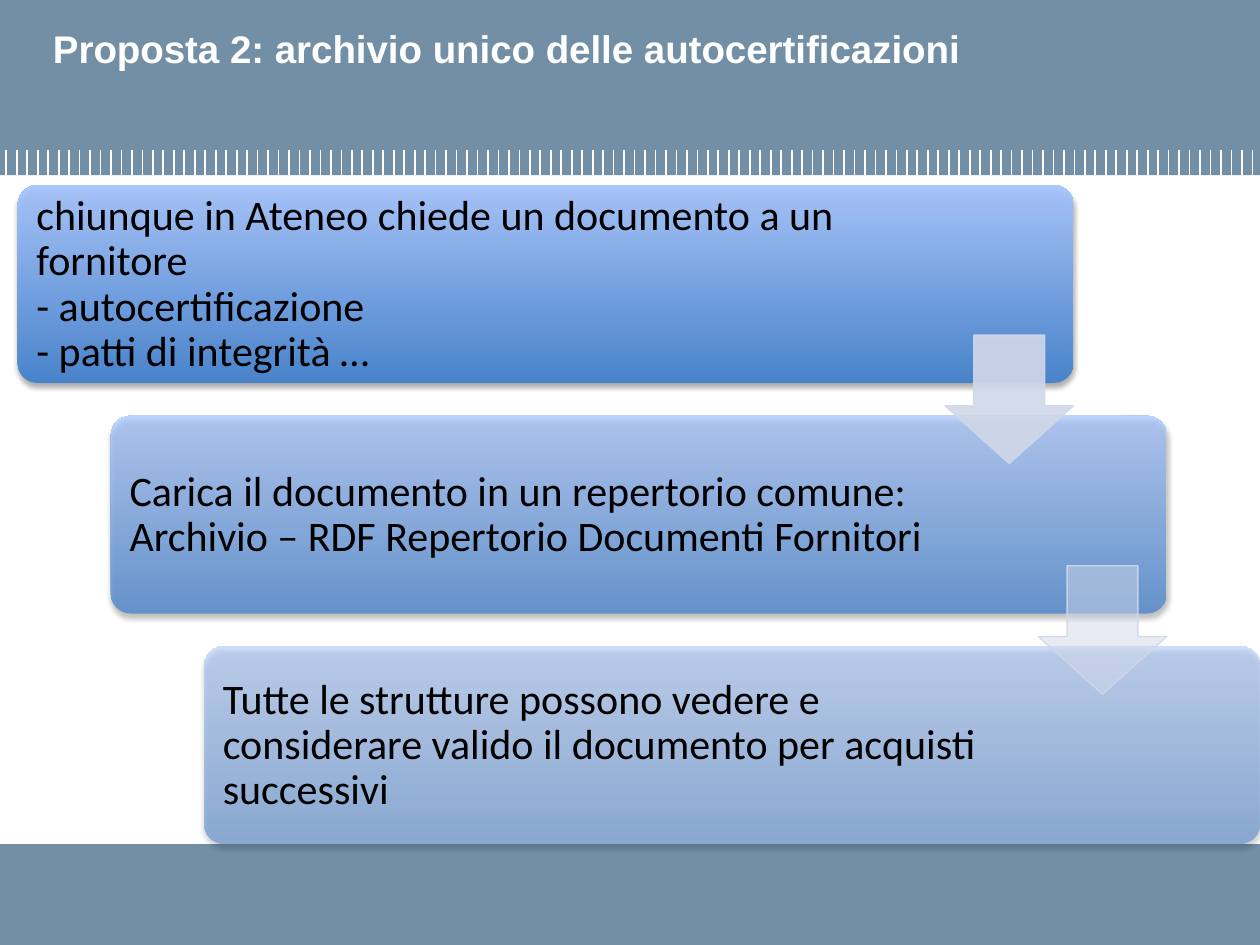
from pptx import Presentation
from pptx.dml.color import RGBColor
from pptx.enum.shapes import MSO_CONNECTOR, MSO_SHAPE
from pptx.enum.text import MSO_ANCHOR, PP_ALIGN
from pptx.oxml import parse_xml
from pptx.oxml.ns import nsdecls, qn
from pptx.util import Inches, Pt

BAND = "728FA5"
WHITE = "FFFFFF"
ARROW = "D0D8E8"
TICK_COUNT = 120
STEPS = [
    (["chiunque in Ateneo chiede un documento a un fornitore",
      "- autocertificazione", "- patti di integrità …"], 6.69, 90),
    (["Carica il documento in un repertorio comune:",
      "Archivio – RDF Repertorio Documenti Fornitori"], 6.53, 70),
    (["Tutte le strutture possono vedere e considerare valido il documento "
      "per acquisti successivi"], 6.53, 50),
]
ARROW_OPACITIES = [90, 50]


def color(value):
    return RGBColor.from_string(value)


def set_opacity(element, percent):
    for node in element.iter(qn("a:srgbClr")):
        node.append(parse_xml(f'<a:alpha {nsdecls("a")} val="{percent * 1000}"/>'))


def add_shape(page, kind, left, top, width, height):
    shape = page.shapes.add_shape(
        kind, Inches(left), Inches(top), Inches(width), Inches(height))
    shape.shadow.inherit = False
    shape.line.fill.background()
    return shape


def add_band(page, left, top, width, height):
    band = add_shape(page, MSO_SHAPE.RECTANGLE, left, top, width, height)
    band.fill.solid()
    band.fill.fore_color.rgb = color(BAND)


def add_ticks(page, left, top, width, height):
    for index in range(TICK_COUNT):
        x = Inches(left + index * width / (TICK_COUNT - 1))
        tick = page.shapes.add_connector(
            MSO_CONNECTOR.STRAIGHT, x, Inches(top), x, Inches(top + height))
        tick.line.color.rgb = color(WHITE)
        tick.line.width = Pt(1)
        tick._element.spPr.append(parse_xml(f'<a:effectLst {nsdecls("a")}/>'))


def add_title(page, left, top, width, height):
    title = page.shapes.title
    title.left, title.top = Inches(left), Inches(top)
    title.width, title.height = Inches(width), Inches(height)
    page.shapes._spTree.append(title._element)
    title.text_frame.vertical_anchor = MSO_ANCHOR.TOP
    para = title.text_frame.paragraphs[0]
    para.alignment = PP_ALIGN.LEFT
    span = para.add_run()
    span.text = "Proposta 2: archivio unico delle autocertificazioni"
    span.font.name = "Arial"
    span.font.size = Pt(22)
    span.font.bold = True
    span.font.color.rgb = color(WHITE)


def add_panel(page, left, top, width, height, opacity):
    panel = add_shape(page, MSO_SHAPE.ROUNDED_RECTANGLE, left, top, width, height)
    panel.adjustments[0] = 0.1
    panel.fill.gradient()
    panel.fill.gradient_angle = 90
    for stop, value in zip(panel.fill.gradient_stops, ["3F7FCE", "A4C4FF"]):
        stop.color.rgb = color(value)
    properties = panel._element.spPr
    set_opacity(properties, opacity)
    properties.find(qn("a:effectLst")).append(parse_xml(
        f'<a:outerShdw {nsdecls("a")} blurRad="{Pt(3.1)}" dist="{Pt(1.8)}" '
        'dir="5400000" rotWithShape="0"><a:srgbClr val="000000">'
        '<a:alpha val="35000"/></a:srgbClr></a:outerShdw>'))


def add_step_text(page, left, top, width, height, lines):
    box = page.shapes.add_textbox(
        Inches(left), Inches(top), Inches(width), Inches(height))
    frame = box.text_frame
    frame.word_wrap = True
    frame.vertical_anchor = MSO_ANCHOR.MIDDLE
    frame.margin_left = frame.margin_right = Inches(0.1)
    frame.margin_top = frame.margin_bottom = Inches(0.1)
    para = frame.paragraphs[0]
    para.line_spacing = 0.9
    for index, line in enumerate(lines):
        if index:
            para.add_line_break()
        span = para.add_run()
        span.text = line
        span.font.name = "Calibri"
        span.font.size = Pt(24)
        span.font.color.rgb = color("000000")


def add_arrow(page, left, top, size, opacity):
    arrow = add_shape(page, MSO_SHAPE.DOWN_ARROW, left, top, size, size)
    arrow.adjustments[0] = 0.55
    arrow.adjustments[1] = 0.45
    arrow.fill.solid()
    arrow.fill.fore_color.rgb = color(ARROW)
    set_opacity(arrow._element.spPr, opacity)
    arrow.line.color.rgb = color(ARROW)
    arrow.line.width = Pt(0.75)
    set_opacity(arrow._element.spPr.find(qn("a:ln")), 90)


def add_process(page, left, top, width, height):
    panel_width, panel_height, arrow_size = 8.38, 1.57, 1.02
    step_x = (width - panel_width) / (len(STEPS) - 1)
    step_y = (height - panel_height) / (len(STEPS) - 1)
    for index, (lines, text_width, opacity) in enumerate(STEPS):
        x, y = left + index * step_x, top + index * step_y
        add_panel(page, x, y, panel_width, panel_height, opacity)
        add_step_text(page, x + 0.05, y + 0.05, text_width, panel_height - 0.09, lines)
    for index, opacity in enumerate(ARROW_OPACITIES):
        x = left + index * step_x + panel_width - arrow_size
        add_arrow(page, x, top + index * step_y + 1.19, arrow_size, opacity)


def main():
    deck = Presentation()
    deck.slide_width, deck.slide_height = Inches(10), Inches(7.5)
    page = deck.slides.add_slide(deck.slide_layouts[5])
    add_band(page, 0, 0, 10, 1.39)
    add_band(page, 0, 6.7, 10, 0.8)
    add_ticks(page, 0.05, 1.19, 9.89, 0.2)
    add_title(page, 0.32, 0.15, 9.38, 0.92)
    add_process(page, 0.14, 1.47, 9.86, 5.23)
    deck.save("out.pptx")


if __name__ == "__main__":
    main()
